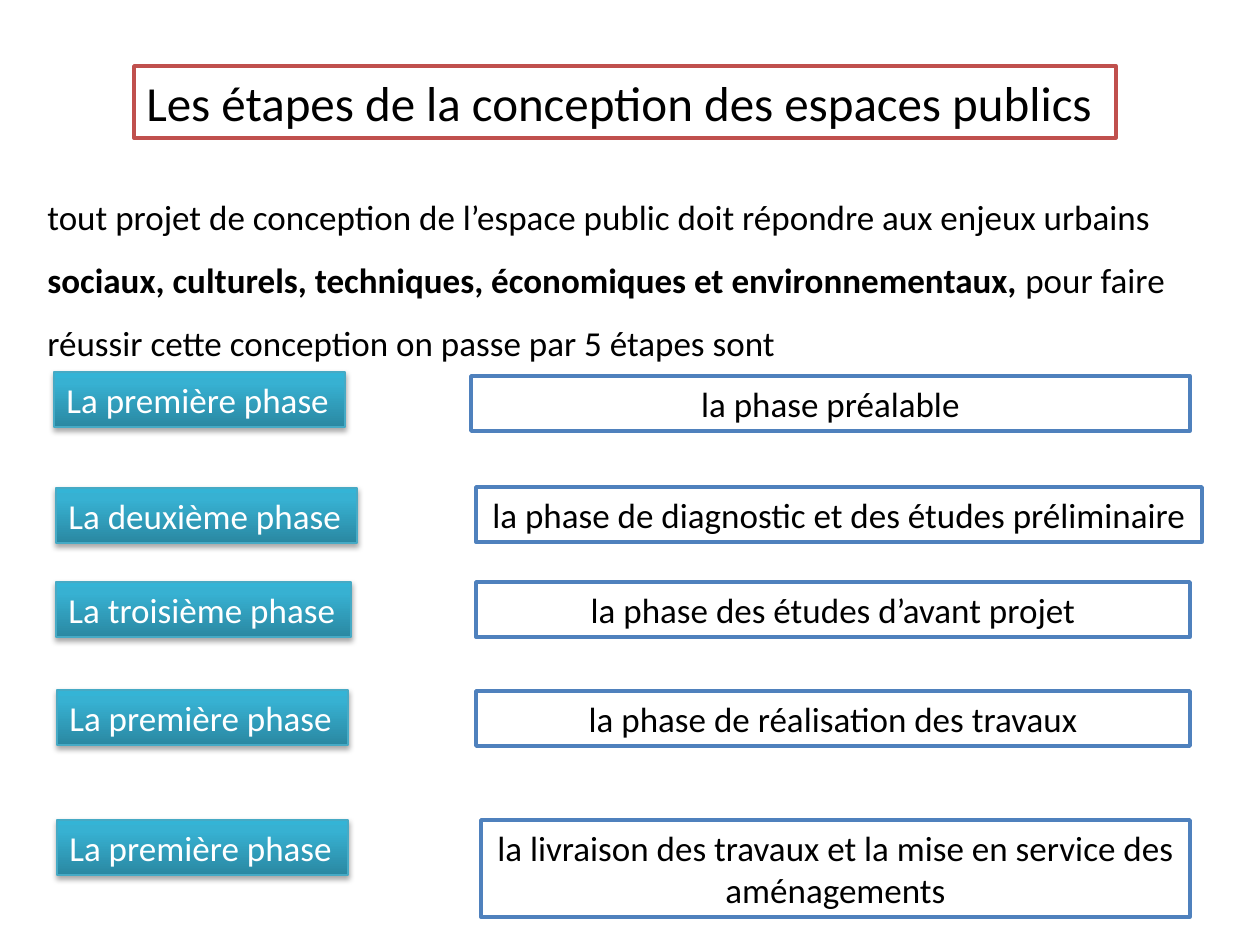
from dataclasses import dataclass
from pptx import Presentation
from pptx.dml.color import RGBColor as Rgb
from pptx.enum.shapes import MSO_SHAPE as Preset
from pptx.enum.text import MSO_ANCHOR as Anchor, PP_ALIGN as Align
from pptx.oxml import parse_xml
from pptx.oxml.ns import nsdecls
from pptx.util import Emu, Pt


@dataclass(frozen=True)
class Theme:
    font: str = "Calibri"
    title_size: int = 28
    text_size: int = 20
    paper: str = "FFFFFF"
    ink: str = "000000"
    title_line: str = "C0504D"
    step_line: str = "4F81BD"
    label_line: str = "46AAC5"
    label_stops: tuple = ((0, "2A88A2"), (80, "37B1D2"), (100, "34B4D6"))


THEME = Theme()
PX_PER_INCH = 126
PAGE = (1260, 945)

TITLE = "Les étapes de la conception des espaces publics"
INTRO = [
    [("tout projet de conception de l’espace public doit répondre aux enjeux urbains", False)],
    [("sociaux, culturels, techniques, économiques et environnementaux, ", True),
     ("pour faire réussir cette conception on passe par 5 étapes sont", False)],
]
PHASES = [
    ("La première phase", (54, 372, 291, 55),
     "la phase préalable", (471, 376, 719, 55)),
    ("La deuxième phase", (56, 488, 301, 55),
     "la phase de diagnostic et des études préliminaire", (476, 487, 726, 55)),
    ("La troisième phase", (56, 582, 295, 55),
     "la phase des études d’avant projet", (476, 582, 714, 55)),
    ("La première phase", (57, 690, 291, 55),
     "la phase de réalisation des travaux", (476, 691, 714, 55)),
    ("La première phase", (57, 820, 291, 55),
     "la livraison des travaux et la mise en service des\naménagements", (481, 820, 709, 97)),
]


def px(length):
    return Emu(round(length * 914400 / PX_PER_INCH))


def style_run(span, size, color, bold=False):
    span.font.name = THEME.font
    span.font.size = Pt(size)
    span.font.bold = bold
    span.font.color.rgb = Rgb.from_string(color)


def add_panel(page, box, text, line, width, size, color, align):
    shape = page.shapes.add_shape(Preset.RECTANGLE, *map(px, box))
    shape.shadow.inherit = False
    shape.fill.solid()
    shape.fill.fore_color.rgb = Rgb.from_string(THEME.paper)
    shape.line.color.rgb = Rgb.from_string(line)
    shape.line.width = Pt(width)
    frame = shape.text_frame
    frame.word_wrap = True
    frame.vertical_anchor = Anchor.TOP
    frame.text = text
    for para in frame.paragraphs:
        para.alignment = align
        for span in para.runs:
            style_run(span, size, color)
    return shape


def add_title(page, box):
    add_panel(page, box, TITLE, THEME.title_line, 2, THEME.title_size, THEME.ink, Align.LEFT)


def add_intro(page, box):
    frame = page.shapes.add_textbox(*map(px, box)).text_frame
    frame.word_wrap = True
    for index, parts in enumerate(INTRO):
        para = frame.add_paragraph() if index else frame.paragraphs[0]
        para.line_spacing = 1.5
        for text, bold in parts:
            span = para.add_run()
            span.text = text
            style_run(span, THEME.text_size, THEME.ink, bold)


def add_label(page, box, text):
    shape = add_panel(page, box, text, THEME.label_line, 0.75,
                      THEME.text_size, THEME.paper, Align.LEFT)
    stops = "".join(
        f'<a:gs pos="{place * 1000}"><a:srgbClr val="{color}"/></a:gs>'
        for place, color in THEME.label_stops)
    gradient = parse_xml(
        f'<a:gradFill {nsdecls("a")} rotWithShape="1"><a:gsLst>{stops}</a:gsLst>'
        '<a:lin ang="16200000" scaled="0"/></a:gradFill>')
    shadow = parse_xml(
        f'<a:outerShdw {nsdecls("a")} blurRad="40000" dist="23000" dir="5400000" '
        'rotWithShape="0"><a:srgbClr val="000000"><a:alpha val="35000"/></a:srgbClr>'
        '</a:outerShdw>')
    properties = shape._element.spPr
    properties.replace(properties.find("{*}solidFill"), gradient)
    properties.find("{*}effectLst").append(shadow)


def add_phase(page, label, label_box, step, step_box):
    add_label(page, label_box, label)
    add_panel(page, step_box, step, THEME.step_line, 2,
              THEME.text_size, THEME.ink, Align.CENTER)


def main():
    deck = Presentation()
    deck.slide_width, deck.slide_height = map(px, PAGE)
    page = deck.slides.add_slide(deck.slide_layouts[6])
    add_title(page, (134, 66, 982, 72))
    add_intro(page, (35, 168, 1171, 197))
    for phase in PHASES:
        add_phase(page, *phase)
    deck.save("out.pptx")


if __name__ == "__main__":
    main()
